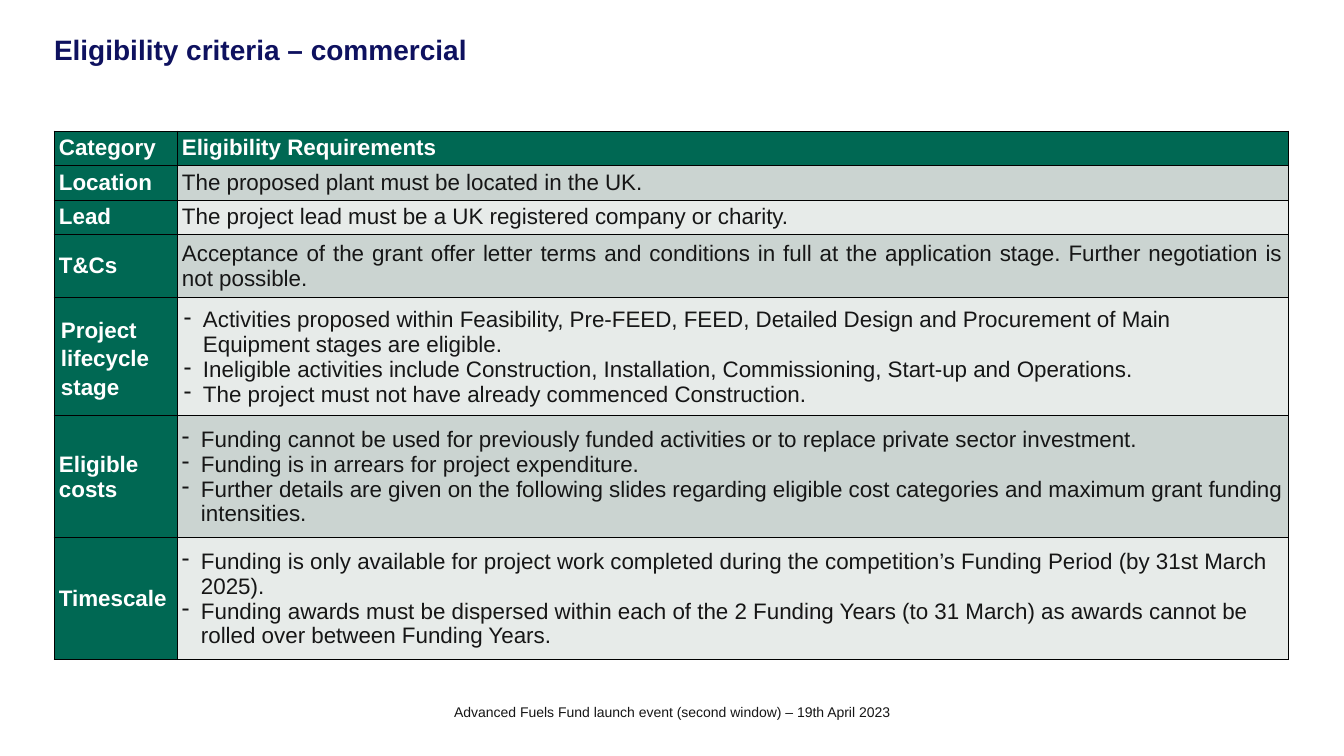
from lxml import etree
from pptx import Presentation
from pptx import util as u
from pptx.dml import color
from pptx.enum import text
from pptx.oxml import ns

EMU_PER_PX = 914400 / 100.8
FONT = "Arial"
NAVY, GREEN, INK, WHITE, BLACK = "0E115F", "006853", "161616", "FFFFFF", "000000"
BANDS = ["CBD4D1", "E7EBE9"]
COLUMN_WIDTHS = [123, 1111]
ROW_HEIGHTS = [34, 35, 34, 64, 118, 122, 122]
CELL_INSETS = (5, 2, 5, 2)
STAGE_INSETS = (7, 1, 7, 0)
STAGE = "Project lifecycle stage"

CRITERIA = [
    ("Location", "The proposed plant must be located in the UK."),
    ("Lead", "The project lead must be a UK registered company or charity."),
    ("T&Cs", "Acceptance of the grant offer letter terms and conditions in full at the "
             "application stage. Further negotiation is not possible."),
    (STAGE, [
        "Activities proposed within Feasibility, Pre-FEED, FEED, Detailed Design and "
        "Procurement of Main Equipment stages are eligible.",
        "Ineligible activities include Construction, Installation, Commissioning, "
        "Start-up and Operations.",
        "The project must not have already commenced Construction.",
    ]),
    ("Eligible costs", [
        "Funding cannot be used for previously funded activities or to replace private "
        "sector investment.",
        "Funding is in arrears for project expenditure.",
        "Further details are given on the following slides regarding eligible cost "
        "categories and maximum grant funding intensities.",
    ]),
    ("Timescale", [
        "Funding is only available for project work completed during the competition’s "
        "Funding Period (by 31st March 2025).",
        "Funding awards must be dispersed within each of the 2 Funding Years (to 31 March) "
        "as awards cannot be rolled over between Funding Years.",
    ]),
]


def px(length):
    return u.Emu(round(length * EMU_PER_PX))


def rgb(value):
    return color.RGBColor.from_string(value)


def add_run(paragraph, words, size, ink, bold=False):
    run = paragraph.add_run()
    run.text = words
    run.font.name = FONT
    run.font.size = u.Pt(size)
    run.font.bold = bold
    run.font.color.rgb = rgb(ink)


def set_insets(holder, insets):
    sides = ("margin_left", "margin_top", "margin_right", "margin_bottom")
    for side, inset in zip(sides, insets):
        setattr(holder, side, px(inset))


def add_title(slide, words):
    title = slide.shapes.title
    title.left, title.top, title.width, title.height = map(px, (54, 36, 1237, 138))
    frame = title.text_frame
    frame.word_wrap = True
    frame.auto_size = text.MSO_AUTO_SIZE.NONE
    frame.vertical_anchor = text.MSO_ANCHOR.TOP
    set_insets(frame, (0, 0, 0, 0))
    paragraph = frame.paragraphs[0]
    paragraph.alignment = text.PP_ALIGN.LEFT
    paragraph.line_spacing = 0.9
    add_run(paragraph, words, 20, NAVY, True)


def add_footer(slide, words):
    footer = slide.shapes.add_textbox(*map(px, (391, 699, 562, 20)))
    footer.text_frame.word_wrap = True
    paragraph = footer.text_frame.paragraphs[0]
    paragraph.alignment = text.PP_ALIGN.CENTER
    add_run(paragraph, words, 10, INK)


def add_dash(paragraph):
    properties = paragraph._p.get_or_add_pPr()
    properties.set("marL", str(px(19)))
    properties.set("indent", str(-px(19)))
    etree.SubElement(properties, ns.qn("a:buChar"), char="-")


def set_borders(cell):
    properties = cell._tc.get_or_add_tcPr()
    for position, side in enumerate(("lnL", "lnR", "lnT", "lnB")):
        line = etree.Element(ns.qn(f"a:{side}"), w=str(u.Pt(0.63)))
        fill = etree.SubElement(line, ns.qn("a:solidFill"))
        etree.SubElement(fill, ns.qn("a:srgbClr"), val=BLACK)
        properties.insert(position, line)


def fill_cell(cell, content, background, ink, bold, insets):
    cell.fill.solid()
    cell.fill.fore_color.rgb = rgb(background)
    set_borders(cell)
    cell.vertical_anchor = text.MSO_ANCHOR.MIDDLE
    set_insets(cell, insets)
    bulleted = isinstance(content, list)
    frame = cell.text_frame
    for index, words in enumerate(content if bulleted else [content]):
        paragraph = frame.add_paragraph() if index else frame.paragraphs[0]
        if bulleted:
            add_dash(paragraph)
        else:
            paragraph.alignment = text.PP_ALIGN.JUSTIFY
        add_run(paragraph, words, 16, ink, bold)


def add_criteria_table(slide):
    frame = slide.shapes.add_table(
        len(ROW_HEIGHTS), len(COLUMN_WIDTHS),
        *map(px, (54, 131, sum(COLUMN_WIDTHS), sum(ROW_HEIGHTS))))
    table = frame.table
    table.first_row = table.horz_banding = False
    for column, width in zip(table.columns, COLUMN_WIDTHS):
        column.width = px(width)
    for row, height in zip(table.rows, ROW_HEIGHTS):
        row.height = px(height)
    for column, heading in enumerate(("Category", "Eligibility Requirements")):
        fill_cell(table.cell(0, column), heading, GREEN, WHITE, True, CELL_INSETS)
    for index, (category, requirement) in enumerate(CRITERIA):
        insets = STAGE_INSETS if category == STAGE else CELL_INSETS
        category_cell, requirement_cell = table.rows[index + 1].cells
        fill_cell(category_cell, category, GREEN, WHITE, True, insets)
        fill_cell(requirement_cell, requirement, BANDS[index % 2], INK, False, insets)
        if category == STAGE:
            paragraph = category_cell.text_frame.paragraphs[0]
            paragraph.line_spacing = 1.15
            paragraph.space_after = u.Pt(8)


def main():
    presentation = Presentation()
    presentation.slide_width, presentation.slide_height = px(1344), px(756)
    slide = presentation.slides.add_slide(presentation.slide_layouts[5])
    add_title(slide, "Eligibility criteria – commercial")
    add_criteria_table(slide)
    add_footer(slide, "Advanced Fuels Fund launch event (second window) – 19th April 2023")
    presentation.save("out.pptx")


if __name__ == "__main__":
    main()
